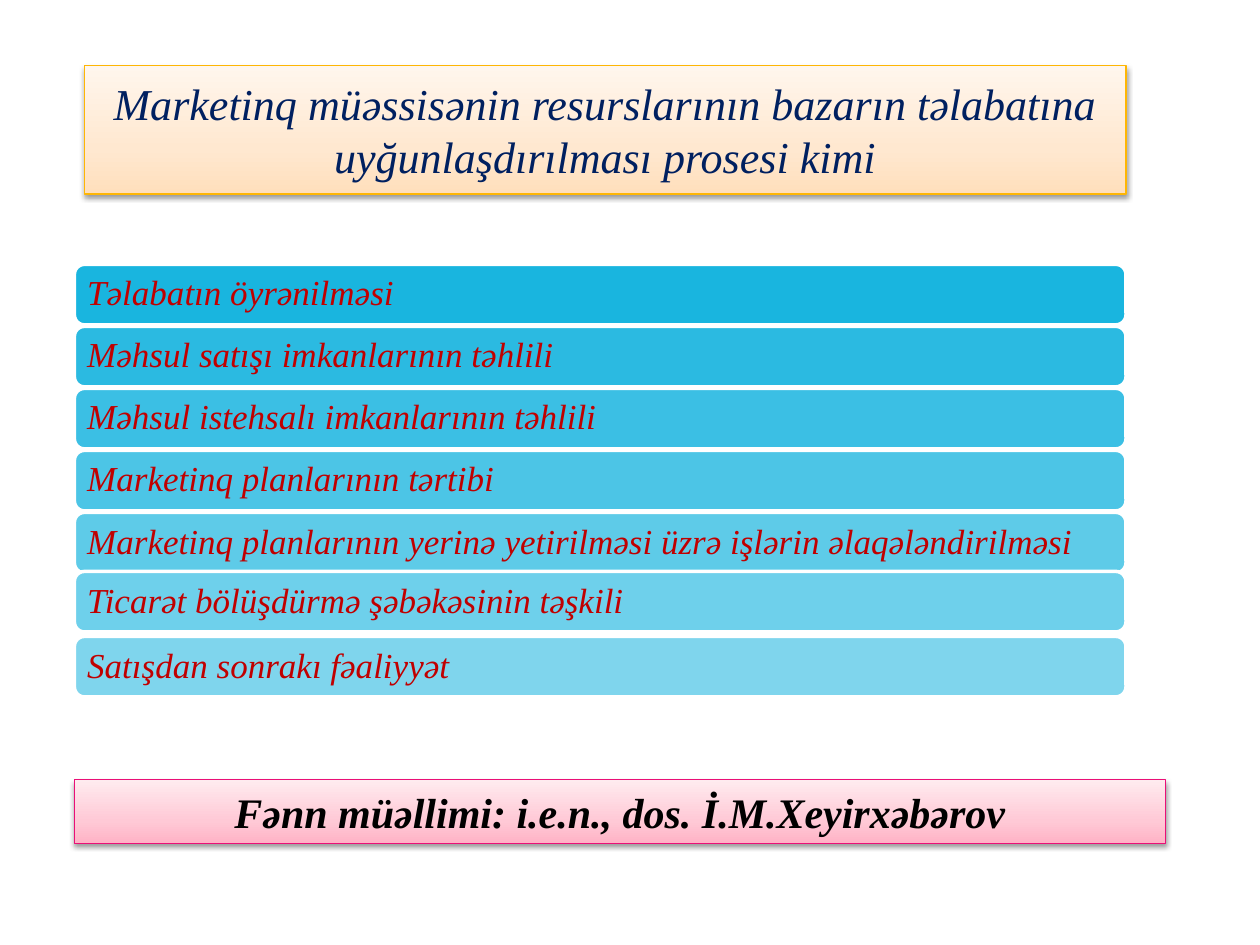
"""Build a slide listing the stages of marketing as a process."""
import pptx
import pptx.dml.color
import pptx.enum.shapes
import pptx.enum.text
import pptx.oxml
import pptx.oxml.ns
import pptx.util
from pptx.util import Cm

STAGES = [
    "Təlabatın öyrənilməsi",
    "Məhsul satışı imkanlarının təhlili",
    "Məhsul istehsalı imkanlarının təhlili",
    "Marketinq planlarının tərtibi",
    "Marketinq planlarının yerinə yetirilməsi üzrə işlərin əlaqələndirilməsi",
    "Ticarət bölüşdürmə şəbəkəsinin təşkili",
    "Satışdan sonrakı fəaliyyət",
]
RAISED_STAGE = 5
FIRST_TOP, PITCH = 5.33, 1.25
NAMESPACE = pptx.oxml.ns.nsdecls("a")


def color(value):
    return pptx.dml.color.RGBColor.from_string(value)


class SlideBuilder:
    """Holds the style and the current slide."""

    font = "Times New Roman"
    bar_color = "00ADDC"
    bar_text = "C00000"

    def __init__(self, deck):
        self.page = deck.slides.add_slide(deck.slide_layouts[5])

    def set_text(self, box, text, size, hue, align, bold=False):
        frame = box.text_frame
        frame.text = text
        frame.word_wrap = True
        frame.auto_size = pptx.enum.text.MSO_AUTO_SIZE.NONE
        frame.vertical_anchor = pptx.enum.text.MSO_ANCHOR.MIDDLE
        para = frame.paragraphs[0]
        para.alignment = align
        for span in para.runs:
            span.font.name = self.font
            span.font.size = pptx.util.Pt(size)
            span.font.italic = True
            span.font.bold = bold
            span.font.color.rgb = color(hue)
        return para

    def outline(self, box, hue, width):
        box.line.color.rgb = color(hue)
        box.line.width = pptx.util.Pt(width)

    def panel(self, box, stops, line):
        self.outline(box, line, 0.75)
        stop_list = "".join(
            f'<a:gs pos="{place * 1000}"><a:srgbClr val="{hue}"/></a:gs>'
            for place, hue in zip((0, 35, 100), stops))
        gradient = pptx.oxml.parse_xml(
            f'<a:gradFill {NAMESPACE} rotWithShape="1"><a:gsLst>{stop_list}</a:gsLst>'
            '<a:lin ang="16200000" scaled="0"/></a:gradFill>')
        shadow = pptx.oxml.parse_xml(
            f'<a:effectLst {NAMESPACE}><a:outerShdw blurRad="39400" dist="20300" '
            'dir="5400000" rotWithShape="0"><a:srgbClr val="000000">'
            '<a:alpha val="38000"/></a:srgbClr></a:outerShdw></a:effectLst>')
        properties = box.element.spPr
        border = properties.find(pptx.oxml.ns.qn("a:ln"))
        border.addprevious(gradient)
        border.addnext(shadow)

    def title(self, text):
        box = self.page.shapes.title
        box.left, box.top, box.width, box.height = Cm(1.7), Cm(1.32), Cm(21), Cm(2.59)
        self.panel(box, ("FFDFBC", "FFE8D0", "FFF6ED"), "FEB604")
        self.set_text(box, text, 25.2, "002060", pptx.enum.text.PP_ALIGN.CENTER)

    def bar(self, text, top, opacity):
        box = self.page.shapes.add_shape(
            pptx.enum.shapes.MSO_SHAPE.ROUNDED_RECTANGLE,
            Cm(1.5), Cm(top), Cm(21.2), Cm(1.22))
        box.shadow.inherit = False
        box.fill.solid()
        box.fill.fore_color.rgb = color(self.bar_color)
        hue = box.element.spPr.find(".//" + pptx.oxml.ns.qn("a:srgbClr"))
        hue.append(pptx.oxml.parse_xml(
            f'<a:alpha {NAMESPACE} val="{round(opacity * 1000)}"/>'))
        self.outline(box, "FFFFFF", 2)
        para = self.set_text(box, text, 20, self.bar_text, pptx.enum.text.PP_ALIGN.LEFT)
        para.line_spacing = 0.9
        frame = box.text_frame
        frame.margin_left = frame.margin_right = Cm(0.2)
        frame.margin_top = frame.margin_bottom = Cm(0.2)

    def footer(self, text):
        box = self.page.shapes.add_shape(
            pptx.enum.shapes.MSO_SHAPE.RECTANGLE,
            Cm(1.5), Cm(15.72), Cm(22), Cm(1.28))
        self.panel(box, ("FFB3C6", "FFC9D6", "FFEBEF"), "EA0F77")
        self.set_text(box, text, 24, "000000", pptx.enum.text.PP_ALIGN.CENTER, bold=True)


def main():
    deck = pptx.Presentation()
    deck.slide_width, deck.slide_height = Cm(25.4), Cm(19.05)
    builder = SlideBuilder(deck)
    builder.title("Marketinq müəssisənin resurslarının bazarın təlabatına "
                  "uyğunlaşdırılması prosesi kimi")
    for index, stage in enumerate(STAGES):
        lift = 0.06 if index == RAISED_STAGE else 0
        opacity = 90 - 40 * index / (len(STAGES) - 1)
        builder.bar(stage, FIRST_TOP + PITCH * index - lift, opacity)
    builder.footer("Fənn müəllimi: i.e.n., dos. İ.M.Xeyirxəbərov")
    deck.save("out.pptx")


if __name__ == "__main__":
    main()
